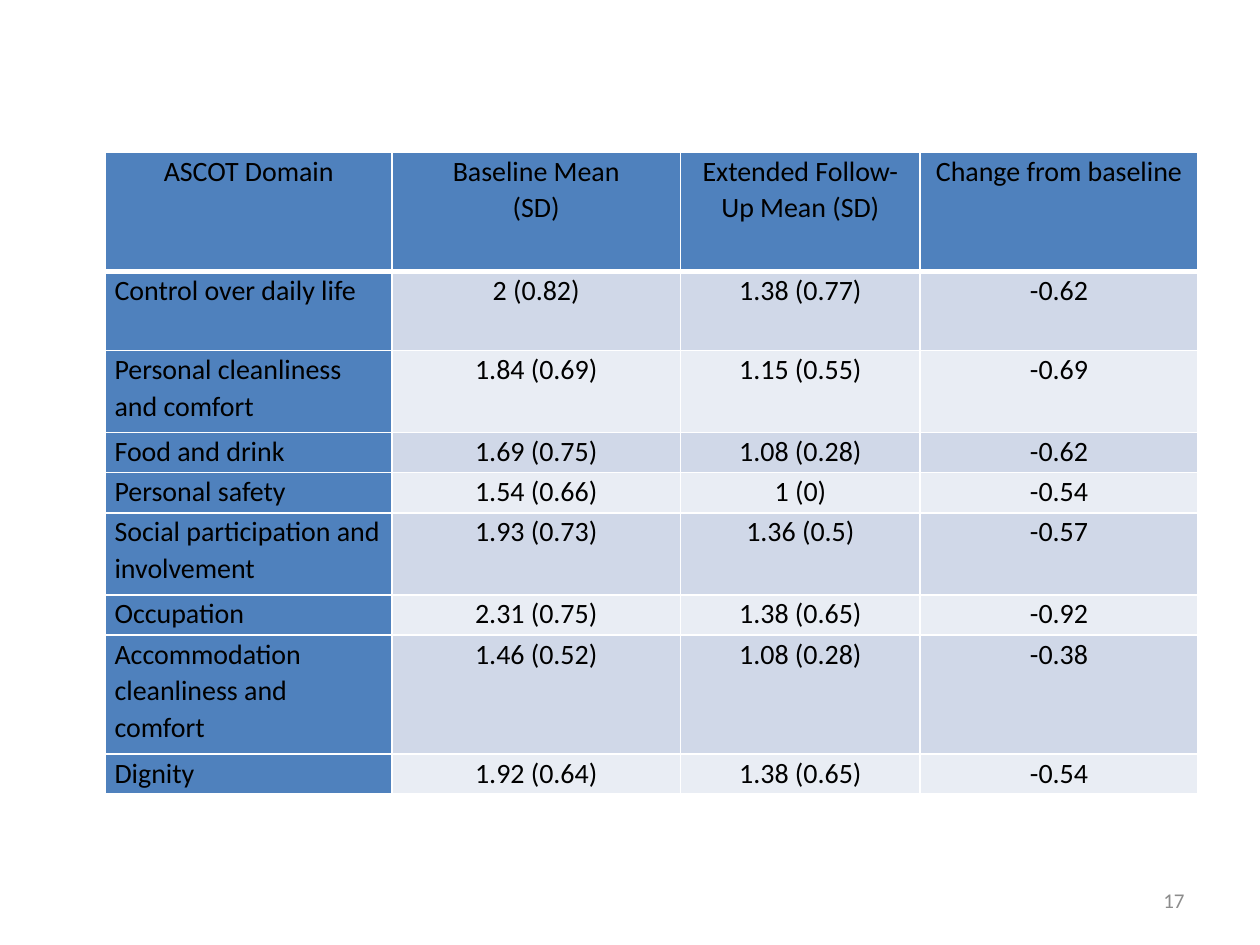
from dataclasses import dataclass

from lxml.etree import SubElement
from pptx import Presentation
from pptx.dml.color import RGBColor
from pptx.enum.text import MSO_ANCHOR, PP_ALIGN
from pptx.oxml.ns import qn
from pptx.util import Cm, Pt


@dataclass(frozen=True)
class Theme:
    """Hold the colours, font and type sizes."""
    font: str = "Calibri"
    body: int = 16
    small: int = 12
    ink: str = "000000"
    grey: str = "8C8C8C"
    head: str = "4F81BD"
    rule: str = "FFFFFF"
    bands: tuple = ("D0D8E8", "E9EDF4")


THEME = Theme()
WIDTHS = (5.77, 5.82, 4.83, 5.6)
HEIGHTS = (2.4, 1.6, 1.65, 0.81, 0.81, 1.65, 0.81, 2.4, 0.81)
ROWS = (
    ("ASCOT Domain", "Baseline Mean\n(SD)", "Extended Follow-Up Mean (SD)", "Change from baseline"),
    ("Control over daily life", "2 (0.82)", "1.38 (0.77)", "-0.62"),
    ("Personal cleanliness and comfort", "1.84 (0.69)", "1.15 (0.55)", "-0.69"),
    ("Food and drink", "1.69 (0.75)", "1.08 (0.28)", "-0.62"),
    ("Personal safety", "1.54 (0.66)", "1 (0)", "-0.54"),
    ("Social participation and involvement", "1.93 (0.73)", "1.36 (0.5)", "-0.57"),
    ("Occupation", "2.31 (0.75)", "1.38 (0.65)", "-0.92"),
    ("Accommodation cleanliness and comfort", "1.46 (0.52)", "1.08 (0.28)", "-0.38"),
    ("Dignity", "1.92 (0.64)", "1.38 (0.65)", "-0.54"),
)


def add_run(para, text, size, ink):
    """Add one styled run to a paragraph."""
    run = para.add_run()
    run.text = text
    font = run.font
    font.name, font.size = THEME.font, Pt(size)
    font.color.rgb = RGBColor.from_string(ink)


def add_rules(cell, base):
    """Draw the four borders of a cell, the base one at its own weight."""
    props = cell._tc.get_or_add_tcPr()
    for side, weight in (("L", 1), ("R", 1), ("T", 1), ("B", base)):
        line = SubElement(props, qn(f"a:ln{side}"), w=str(Pt(weight)))
        fill = SubElement(line, qn("a:solidFill"))
        SubElement(fill, qn("a:srgbClr"), val=THEME.rule)


def fill_cell(cell, text, paint, align, base):
    """Set the borders, fill and text of a cell."""
    add_rules(cell, base)
    cell.fill.solid()
    cell.fill.fore_color.rgb = RGBColor.from_string(paint)
    cell.margin_left = cell.margin_right = Cm(0.18)
    cell.margin_top = cell.margin_bottom = 0
    frame = cell.text_frame
    for i, line in enumerate(text.split("\n")):
        para = frame.add_paragraph() if i else frame.paragraphs[0]
        para.alignment, para.line_spacing = align, 1.07
        add_run(para, line, THEME.body, THEME.ink)


def add_grid(slide):
    """Add the table of mean scores by domain."""
    frame = slide.shapes.add_table(
        len(ROWS), len(WIDTHS), Cm(2.13), Cm(3.07), Cm(sum(WIDTHS)), Cm(sum(HEIGHTS)))
    table = frame.table
    table.first_row = table.horz_banding = False
    for col, width in zip(table.columns, WIDTHS):
        col.width = Cm(width)
    for row, height in zip(table.rows, HEIGHTS):
        row.height = Cm(height)
    for r, row in enumerate(ROWS):
        for c, text in enumerate(row):
            paint = THEME.bands[(r - 1) % 2] if r and c else THEME.head
            align = PP_ALIGN.LEFT if r and not c else PP_ALIGN.CENTER
            fill_cell(table.cell(r, c), text, paint, align, 1 if r else 3)


def add_page(slide, text):
    """Add the page number at the lower right."""
    box = slide.shapes.add_textbox(Cm(18.2), Cm(17.65), Cm(5.93), Cm(1.01))
    frame = box.text_frame
    frame.word_wrap = True
    frame.vertical_anchor = MSO_ANCHOR.MIDDLE
    para = frame.paragraphs[0]
    para.alignment = PP_ALIGN.RIGHT
    add_run(para, text, THEME.small, THEME.grey)


def main():
    """Build and save the slide."""
    deck = Presentation()
    deck.slide_width, deck.slide_height = Cm(25.4), Cm(19.05)
    slide = deck.slides.add_slide(deck.slide_layouts[6])
    add_page(slide, "17")
    add_grid(slide)
    deck.save("out.pptx")


if __name__ == "__main__":
    main()
